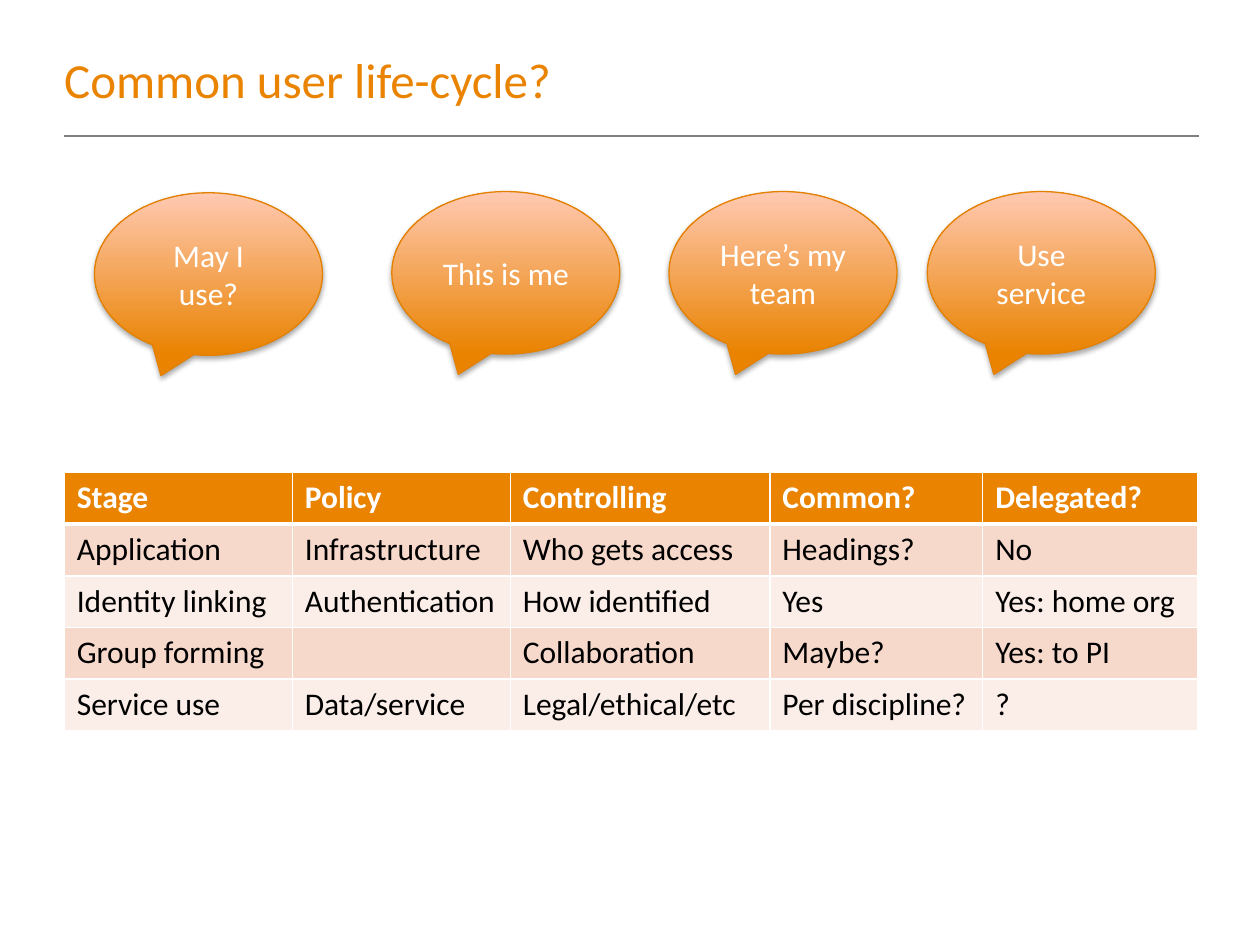
from lxml import etree
from pptx import Presentation
from pptx.dml.color import RGBColor
from pptx.enum.shapes import MSO_CONNECTOR, MSO_SHAPE
from pptx.enum.text import MSO_ANCHOR, PP_ALIGN
from pptx.oxml.ns import qn
from pptx.util import Inches, Pt

LINE = MSO_CONNECTOR.STRAIGHT
CALLOUT = MSO_SHAPE.OVAL_CALLOUT
MIDDLE = MSO_ANCHOR.MIDDLE
CENTER = PP_ALIGN.CENTER

FONT = "Calibri"
ORANGE, WHITE, BLACK = "E98300", "FFFFFF", "000000"
PEACH, OUTLINE, GREY = "FFC9B2", "E48000", "808080"
BANDS = ("F7D9CC", "FBEDE7")
LEFT = 0.51

CALLOUTS = [
    ("May I use?", 0.75, 1.53),
    ("This is me", 3.11, 1.52),
    ("Here’s my team", 5.31, 1.52),
    ("Use service", 7.36, 1.52),
]
COLUMN_WIDTHS = (1.81, 1.73, 2.06, 1.69, 1.71)
ROW_HEIGHT = 0.41
ROWS = [
    ("Stage", "Policy", "Controlling", "Common?", "Delegated?"),
    ("Application", "Infrastructure", "Who gets access", "Headings?", "No"),
    ("Identity linking", "Authentication", "How identified", "Yes", "Yes: home org"),
    ("Group forming", "", "Collaboration", "Maybe?", "Yes: to PI"),
    ("Service use", "Data/service", "Legal/ethical/etc", "Per discipline?", "?"),
]


def rgb(value):
    return RGBColor.from_string(value)


def add_run(p, text, size, color, bold=False):
    r = p.add_run()
    r.text = text
    r.font.name = FONT
    r.font.size = Pt(size)
    r.font.bold = bold
    r.font.color.rgb = rgb(color)


def add_title(s, text):
    sp = s.shapes.title
    sp.left, sp.top = Inches(LEFT), Inches(0.36)
    sp.width, sp.height = Inches(7.52), Inches(0.54)
    tf = sp.text_frame
    tf.margin_left = tf.margin_right = tf.margin_top = tf.margin_bottom = 0
    tf.vertical_anchor = MIDDLE
    p = tf.paragraphs[0]
    p.alignment = PP_ALIGN.LEFT
    add_run(p, text, 28, ORANGE)


def add_rule(s):
    line = s.shapes.add_connector(
        LINE, Inches(LEFT), Inches(1.08), Inches(9.52), Inches(1.08))
    line.line.color.rgb = rgb(GREY)
    line.line.width = Pt(1)
    etree.SubElement(line._element.spPr, qn("a:effectLst"))


def add_shadow(sp):
    """Give the shape a soft shadow straight below it."""
    sp.shadow.inherit = False
    effects = sp._element.spPr.find(qn("a:effectLst"))
    shadow = etree.SubElement(
        effects, qn("a:outerShdw"), blurRad=str(Pt(3.1)), dist=str(Pt(1.8)),
        dir="5400000", rotWithShape="0")
    color = etree.SubElement(shadow, qn("a:srgbClr"), val=BLACK)
    etree.SubElement(color, qn("a:alpha"), val="35000")


def add_callout(s, text, left, top):
    sp = s.shapes.add_shape(
        CALLOUT, Inches(left), Inches(top), Inches(1.81), Inches(1.29))
    sp.fill.gradient()
    sp.fill.gradient_angle = 90
    for stop, color in zip(sp.fill.gradient_stops, (ORANGE, PEACH)):
        stop.color.rgb = rgb(color)
    sp.line.color.rgb = rgb(OUTLINE)
    sp.line.width = Pt(0.75)
    add_shadow(sp)
    tf = sp.text_frame
    tf.word_wrap = True
    tf.vertical_anchor = MIDDLE
    p = tf.paragraphs[0]
    p.alignment = CENTER
    add_run(p, text, 18, WHITE)


def set_borders(cell, top, bottom):
    """Draw white borders, with top and bottom widths in points."""
    tc_pr = cell._tc.get_or_add_tcPr()
    widths = {"a:lnL": 1, "a:lnR": 1, "a:lnT": top, "a:lnB": bottom}
    for i, (tag, width) in enumerate(widths.items()):
        ln = etree.Element(qn(tag), w=str(Pt(width)))
        fill = etree.SubElement(ln, qn("a:solidFill"))
        etree.SubElement(fill, qn("a:srgbClr"), val=WHITE)
        tc_pr.insert(i, ln)


def add_stage_table(s):
    table = s.shapes.add_table(
        len(ROWS), len(COLUMN_WIDTHS), Inches(LEFT), Inches(3.75),
        Inches(sum(COLUMN_WIDTHS)), Inches(ROW_HEIGHT * len(ROWS))).table
    for column, width in zip(table.columns, COLUMN_WIDTHS):
        column.width = Inches(width)
    for i, texts in enumerate(ROWS):
        header = i == 0
        table.rows[i].height = Inches(ROW_HEIGHT)
        for j, text in enumerate(texts):
            cell = table.cell(i, j)
            cell.fill.solid()
            cell.fill.fore_color.rgb = rgb(ORANGE if header else BANDS[(i - 1) % 2])
            set_borders(cell, 3 if i == 1 else 1, 3 if header else 1)
            if text:
                add_run(cell.text_frame.paragraphs[0], text, 18,
                        WHITE if header else BLACK, header)


def main():
    prs = Presentation()
    prs.slide_width, prs.slide_height = Inches(10), Inches(7.5)
    s = prs.slides.add_slide(prs.slide_layouts[5])
    add_rule(s)
    add_title(s, "Common user life-cycle?")
    add_stage_table(s)
    for text, left, top in CALLOUTS:
        add_callout(s, text, left, top)
    prs.save("out.pptx")


if __name__ == "__main__":
    main()
